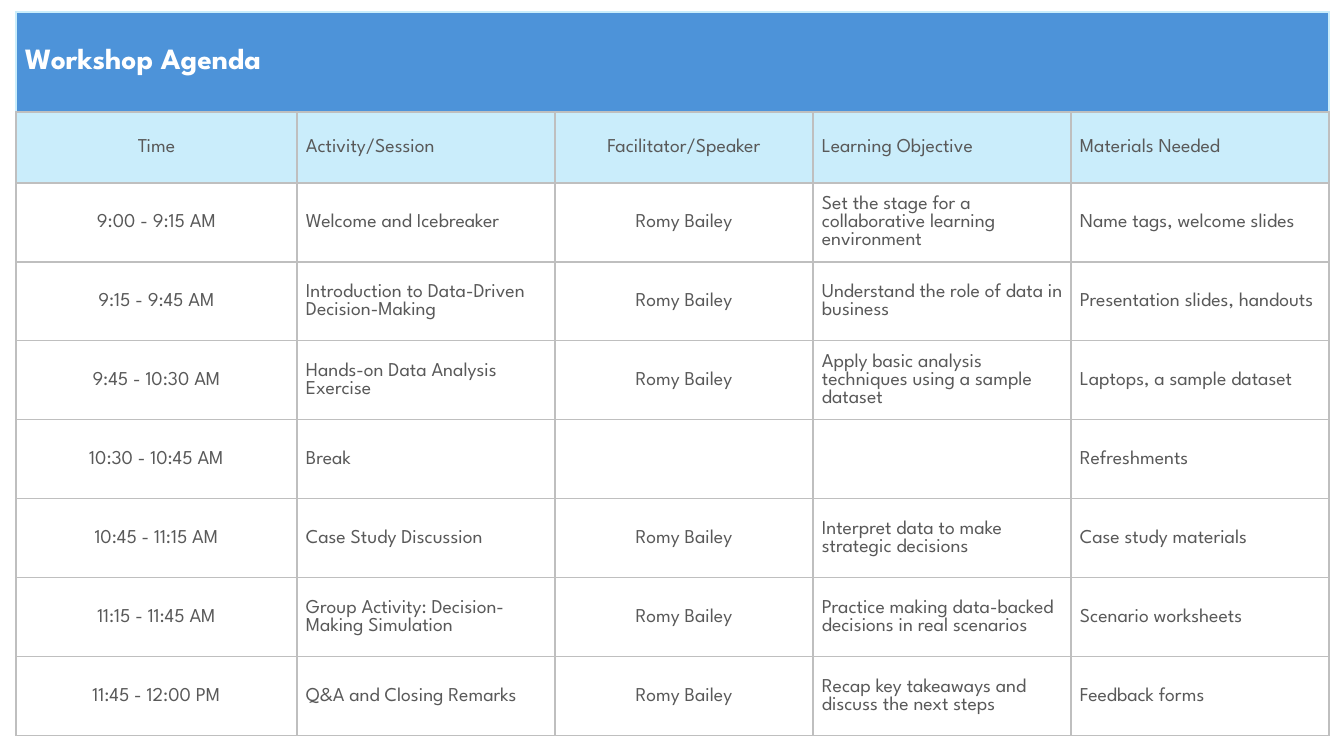
from dataclasses import dataclass

from lxml.etree import SubElement
from pptx import Presentation
from pptx.dml.color import RGBColor as Rgb
from pptx.enum.text import MSO_ANCHOR as Anchor, PP_ALIGN as Align
from pptx.oxml.ns import qn
from pptx.util import Pt

# Content
TITLE = "Workshop Agenda"
HEADINGS = ("Time", "Activity/Session", "Facilitator/Speaker",
            "Learning Objective", "Materials Needed")
HOST = "Romy Bailey"
SESSIONS = [
    ("9:00 - 9:15 AM", "Welcome and Icebreaker", HOST,
     "Set the stage for a collaborative learning environment",
     "Name tags, welcome slides"),
    ("9:15 - 9:45 AM", "Introduction to Data-Driven Decision-Making", HOST,
     "Understand the role of data in business",
     "Presentation slides, handouts"),
    ("9:45 - 10:30 AM", "Hands-on Data Analysis Exercise", HOST,
     "Apply basic analysis techniques using a sample dataset",
     "Laptops, a sample dataset"),
    ("10:30 - 10:45 AM", "Break", "", "", "Refreshments"),
    ("10:45 - 11:15 AM", "Case Study Discussion", HOST,
     "Interpret data to make strategic decisions",
     "Case study materials"),
    ("11:15 - 11:45 AM", "Group Activity: Decision-Making Simulation", HOST,
     "Practice making data-backed decisions in real scenarios",
     "Scenario worksheets"),
    ("11:45 - 12:00 PM", "Q&A and Closing Remarks", HOST,
     "Recap key takeaways and discuss the next steps",
     "Feedback forms"),
]


@dataclass(frozen=True)
class Theme:
    font: str = "League Spartan"
    title_size: int = 21
    text_size: int = 14
    title_fill: str = "4D93D9"
    heading_fill: str = "CAEDFB"
    title_text: str = "FFFFFF"
    text: str = "595959"
    grid: tuple = ("BFBFBF", 1)
    title_edge: tuple = ("CAEDFB", 1.5)


THEME = Theme()

# Layout in px
SLIDE_W, SLIDE_H = 1344, 756
LEFT, TOP = 16, 12
COLUMN_WIDTHS = [281] + [258] * (len(HEADINGS) - 1)
ROW_HEIGHTS = [100, 71] + [79] * len(SESSIONS)
CENTRED_COLUMNS = {HEADINGS.index("Time"), HEADINGS.index("Facilitator/Speaker")}
INDENT, EDGE = 9, 1


def px(length):
    return round(length * 914400 / 100.8)


def draw_borders(cell, edges):
    """Edges are left, right, top and bottom as (colour, points)."""
    properties = cell._tc.get_or_add_tcPr()
    for side, (colour, width) in zip("LRTB", edges):
        line = SubElement(properties, qn(f"a:ln{side}"), w=str(Pt(width)))
        SubElement(SubElement(line, qn("a:solidFill")), qn("a:srgbClr"), val=colour)


def format_cell(cell, edges, fill, centred):
    draw_borders(cell, edges)
    if fill:
        cell.fill.solid()
        cell.fill.fore_color.rgb = Rgb.from_string(fill)
    else:
        cell.fill.background()
    cell.vertical_anchor = Anchor.MIDDLE
    cell.margin_left = px(EDGE if centred else INDENT)
    cell.margin_right = cell.margin_top = px(EDGE)
    cell.margin_bottom = 0


def write(cell, text, size, colour, bold, centred):
    paragraph = cell.text_frame.paragraphs[0]
    paragraph.alignment = Align.CENTER if centred else Align.LEFT
    run = paragraph.add_run()
    run.text = text
    run.font.name = THEME.font
    run.font.size = Pt(size)
    run.font.bold = bold
    run.font.color.rgb = Rgb.from_string(colour)


def main():
    deck = Presentation()
    deck.slide_width, deck.slide_height = px(SLIDE_W), px(SLIDE_H)
    slide = deck.slides.add_slide(deck.slide_layouts[6])

    # Agenda grid
    agenda = slide.shapes.add_table(
        len(ROW_HEIGHTS), len(COLUMN_WIDTHS), px(LEFT), px(TOP),
        px(sum(COLUMN_WIDTHS)), px(sum(ROW_HEIGHTS))).table
    agenda.first_row = agenda.horz_banding = False
    for column, width in zip(agenda.columns, COLUMN_WIDTHS):
        column.width = px(width)
    for row, height in zip(agenda.rows, ROW_HEIGHTS):
        row.height = px(height)

    # Title band
    band = agenda.cell(0, 0)
    band.merge(agenda.cell(0, len(HEADINGS) - 1))
    for cell in agenda.rows[0].cells:
        format_cell(cell, [THEME.title_edge] * 3 + [THEME.grid],
                    THEME.title_fill, centred=False)
    write(band, TITLE, THEME.title_size, THEME.title_text, True, centred=False)

    # Headings and sessions
    for r, entries in enumerate([HEADINGS, *SESSIONS], start=1):
        fill = THEME.heading_fill if entries is HEADINGS else None
        for c, entry in enumerate(entries):
            cell, centred = agenda.cell(r, c), c in CENTRED_COLUMNS
            format_cell(cell, [THEME.grid] * 4, fill, centred)
            if entry:
                write(cell, entry, THEME.text_size, THEME.text, False, centred)

    deck.save("out.pptx")


if __name__ == "__main__":
    main()
